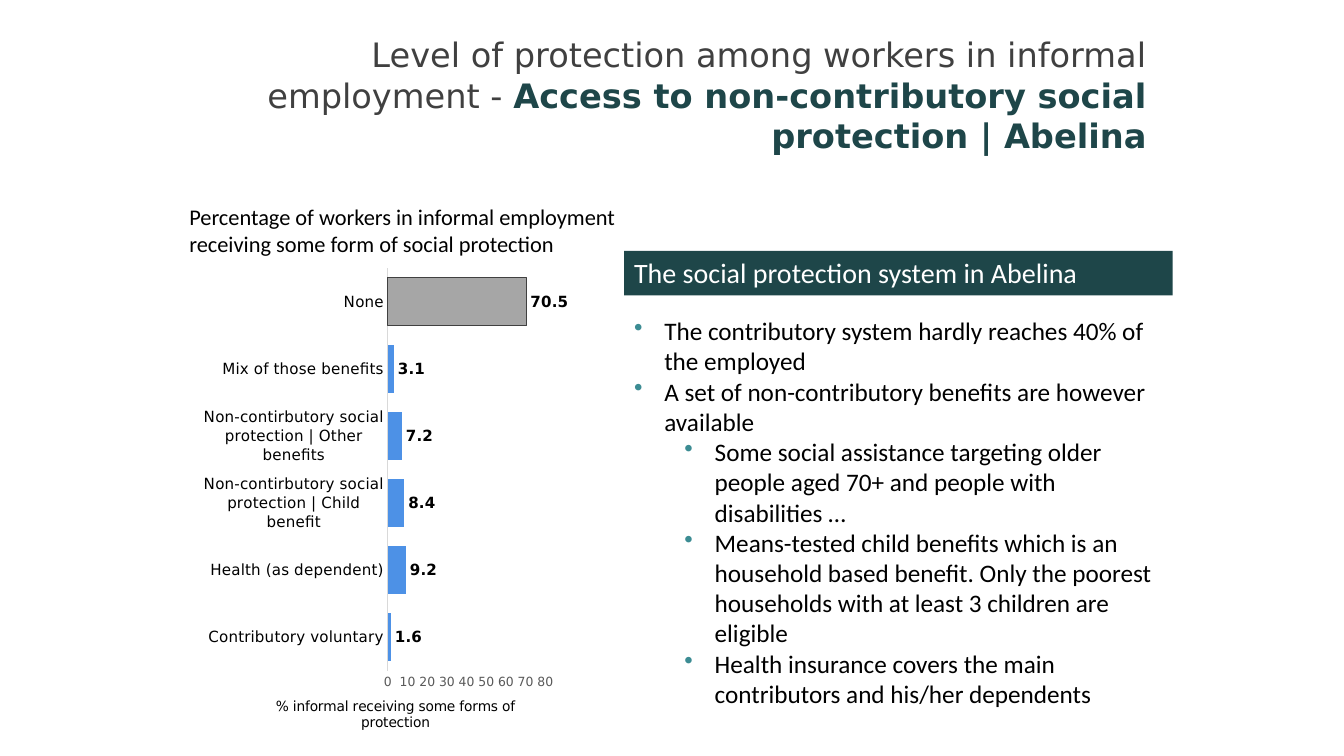
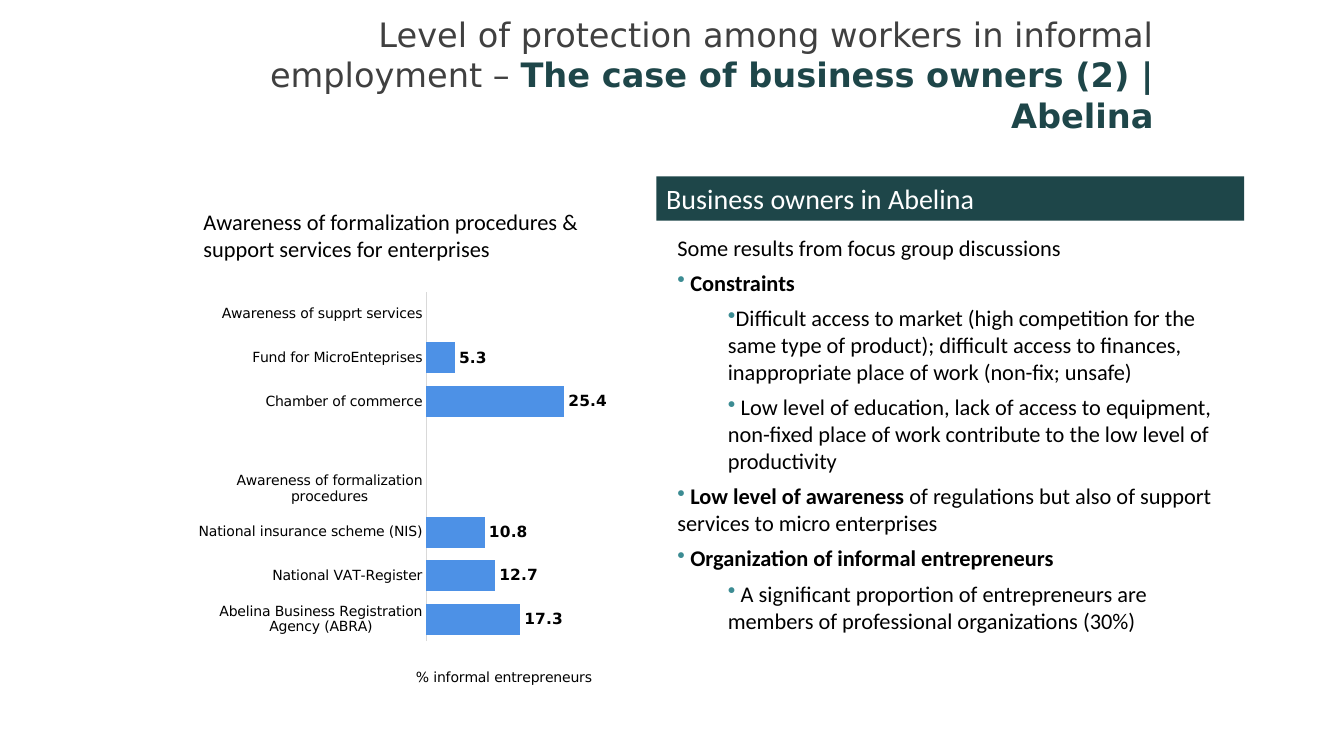
from dataclasses import dataclass

from lxml.etree import SubElement as Sub
from pptx import Presentation
from pptx.chart.data import CategoryChartData as ChartData
from pptx.dml.color import RGBColor as RGB
from pptx.enum.chart import XL_CHART_TYPE as Kind, XL_LABEL_POSITION as Spot
from pptx.enum.chart import XL_TICK_LABEL_POSITION as Ticks, XL_TICK_MARK as Mark
from pptx.enum.shapes import MSO_SHAPE as Shape
from pptx.enum.text import MSO_ANCHOR as Anchor, MSO_AUTO_SIZE as Fit, PP_ALIGN as Align
from pptx.oxml import parse_xml
from pptx.oxml.ns import nsdecls, qn
from pptx.util import Inches, Pt


@dataclass(frozen=True)
class Theme:
    body: str = "Calibri"
    head: str = "DejaVu Sans"
    dark: str = "1E4649"
    teal: str = "3C8C93"
    blue: str = "4D91E6"
    grey: str = "A6A6A6"
    rule: str = "D9D9D9"
    soft: str = "404040"
    pale: str = "595959"
    black: str = "000000"
    white: str = "FFFFFF"
    title: int = 24
    band: int = 20
    text: int = 18
    note: int = 16
    label: int = 11
    small: int = 10
    tick: int = 9


T = Theme()


def apply(obj, **vals):
    for name, val in vals.items():
        setattr(obj, name, val)


def style(font, size, color=T.black, name=T.body, bold=False):
    apply(font, size=Pt(size), name=name, bold=bold)
    font.color.rgb = RGB.from_string(color)


def paint(fmt, color):
    fmt.solid()
    fmt.fore_color.rgb = RGB.from_string(color)


def write(para, text, size, color=T.black, name=T.body, strong=None):
    """Write runs; the parts between asterisks are bold."""
    for i, part in enumerate(text.split("*")):
        if part:
            run = para.add_run()
            run.text = part
            bold = i % 2 == 1
            style(run.font, size, strong if bold and strong else color, name, bold)


def indent(para, left, first):
    props = para._p.get_or_add_pPr()
    props.set("marL", str(Inches(left)))
    props.set("indent", str(Inches(first)))
    return props


def bullet(para, left, first):
    props = indent(para, left, first)
    Sub(Sub(props, qn("a:buClr")), qn("a:srgbClr")).set("val", T.teal)
    Sub(props, qn("a:buChar")).set("char", "•")


def frame(slide, box, **vals):
    text = slide.shapes.add_textbox(*map(Inches, box)).text_frame
    apply(text, word_wrap=True, **vals)
    return text


def title(slide, box, text):
    para = frame(slide, box).paragraphs[0]
    para.alignment = Align.RIGHT
    indent(para, 0.45, -0.45)
    write(para, text, T.title, T.soft, T.head, T.dark)


def caption(slide, box, text):
    area = frame(slide, box, vertical_anchor=Anchor.MIDDLE, auto_size=Fit.SHAPE_TO_FIT_TEXT)
    write(area.paragraphs[0], text, T.note)


def band(slide, box, text):
    bar = slide.shapes.add_shape(Shape.RECTANGLE, *map(Inches, box))
    bar.shadow.inherit = False
    paint(bar.fill, T.dark)
    bar.line.fill.background()
    apply(bar.text_frame, word_wrap=True, vertical_anchor=Anchor.TOP)
    para = bar.text_frame.paragraphs[0]
    para.alignment = Align.LEFT
    write(para, text, T.band, T.white)


def points(slide, box, items, size, lefts, first=0, gap=0):
    """Write (level, text) items; level None has no bullet."""
    area = frame(slide, box, auto_size=Fit.SHAPE_TO_FIT_TEXT)
    for i, (level, text) in enumerate(items):
        para = area.add_paragraph() if i else area.paragraphs[0]
        if level is not None:
            apply(para, level=level, space_before=Pt(gap))
            bullet(para, lefts[level], first)
        write(para, text, size)


def layout(**vals):
    body = "".join(f'<c:{key} val="{val}"/>' for key, val in vals.items())
    return parse_xml(f'<c:layout {nsdecls("c")}><c:manualLayout>{body}'
                     "</c:manualLayout></c:layout>")


def place(parent, index, **vals):
    for old in parent.findall(qn("c:layout")):
        parent.remove(old)
    parent.insert(index, layout(**vals))


def bars(slide, box, rows, plot, top, name, spot, size, ticks=True):
    """Draw rows from bottom to top; plot and spot are shares of the box."""
    data = ChartData(number_format="0.0")
    data.categories = [row[0] for row in rows]
    data.add_series("Series 1", [row[1] for row in rows])
    chart = slide.shapes.add_chart(Kind.BAR_CLUSTERED, *map(Inches, box), data).chart
    apply(chart, has_title=False, has_legend=False)
    style(chart.font, T.small, name=T.head)
    x, y, w, h = plot
    place(chart._chartSpace.chart.plotArea, 0, layoutTarget="inner", xMode="edge",
          yMode="edge", x=x, y=y, w=w, h=h)

    cat, val = chart.category_axis, chart.value_axis
    for axis in (cat, val):
        apply(axis, major_tick_mark=Mark.NONE, minor_tick_mark=Mark.NONE,
              has_major_gridlines=False)
    style(cat.tick_labels.font, size, name=T.head)
    paint(cat.format.line.fill, T.rule)
    cat.format.line.width = Pt(0.75)
    apply(val, minimum_scale=0, maximum_scale=top, major_unit=10, has_title=True)
    val.format.line.fill.background()
    style(val.tick_labels.font, T.tick, T.pale, T.head)
    apply(val.tick_labels, number_format="0", number_format_is_linked=False)
    if not ticks:
        val.tick_label_position = Ticks.NONE
    head = val.axis_title
    write(head.text_frame.paragraphs[0], name, T.small, name=T.head)
    place(head._element, 1, xMode="edge", yMode="edge", x=spot[0], y=spot[1])

    group = chart.plots[0]
    apply(group, gap_width=40, vary_by_categories=False, has_data_labels=True)
    apply(group.data_labels, show_value=True, position=Spot.OUTSIDE_END,
          number_format="0.0", number_format_is_linked=False)
    style(group.data_labels.font, T.label, name=T.head, bold=True)
    line = group.series[0]
    paint(line.format.fill, T.blue)
    return line


def access(slide):
    title(slide, (2.02, 0.29, 9.45, 1.49),
          "Level of protection among workers in informal employment - "
          "*Access to non-contributory social protection | Abelina*")
    caption(slide, (1.78, 1.96, 5.04, 0.64),
            "Percentage of workers in informal employment receiving some form of "
            "social protection")
    band(slide, (6.19, 2.49, 5.44, 0.44), "The social protection system in Abelina")
    points(slide, (6.19, 3.08, 5.48, 4.04), [
        (0, "The contributory system hardly reaches 40% of the employed"),
        (0, "A set of non-contributory benefits are however available"),
        (1, "Some social assistance targeting older people aged 70+ and people with "
            "disabilities …"),
        (1, "Means-tested child benefits which is an household based benefit. Only the "
            "poorest households with at least 3 children are eligible"),
        (1, "Health insurance covers the main contributors and his/her dependents"),
    ], T.text, (0.3, 0.8), -0.3)
    line = bars(slide, (2.02, 2.52, 3.62, 4.77), [
        ("Contributory voluntary", 1.6),
        ("Health (as dependent)", 9.2),
        ("Non-contirbutory social protection | Child benefit", 8.4),
        ("Non-contirbutory social protection | Other benefits", 7.2),
        ("Mix of those benefits", 3.1),
        ("None", 70.5),
    ], (0.51, 0.03, 0.44, 0.84), 80, "% informal receiving some forms of protection",
        (0.19, 0.92), T.label)
    none = line.points[5].format
    paint(none.fill, T.grey)
    paint(none.line.fill, T.soft)
    none.line.width = Pt(0.75)


def owners(slide):
    title(slide, (1.78, 0.09, 9.76, 1.49),
          "Level of protection among workers in informal employment – "
          "*The case of business owners (2) | Abelina*")
    band(slide, (6.51, 1.75, 5.83, 0.44), "Business owners in Abelina")
    points(slide, (6.62, 2.27, 5.72, 4.11), [
        (None, "Some results from focus group discussions"),
        (0, " *Constraints*"),
        (1, "Difficult access to market (high competition for the same type of product); "
            "difficult access to finances, inappropriate place of work (non-fix; unsafe)"),
        (1, " Low level of education, lack of access to equipment, non-fixed place of work "
            "contribute to the low level of productivity"),
        (0, " *Low level of awareness *of regulations but also of support services to "
            "micro enterprises"),
        (0, " *Organization of informal entrepreneurs*"),
        (1, " A significant proportion of entrepreneurs are members of professional "
            "organizations (30%)"),
    ], T.note, (0, 0.5), gap=6)
    caption(slide, (1.92, 2.01, 4.53, 0.64),
            "Awareness of formalization procedures & support services for enterprises")
    bars(slide, (1.8, 2.82, 4.26, 4.07), [
        ("Abelina Business Registration Agency (ABRA)", 17.3),
        ("National VAT-Register", 12.7),
        ("National insurance scheme (NIS)", 10.8),
        ("Awareness of formalization procedures", None),
        ("", None),
        ("Chamber of commerce", 25.4),
        ("Fund for MicroEnteprises", 5.3),
        ("Awareness of supprt services", None),
    ], (0.57, 0.02, 0.38, 0.85), 30, "% informal entrepreneurs", (0.54, 0.93),
        T.small, ticks=False)


def main():
    deck = Presentation()
    apply(deck, slide_width=Inches(13.33), slide_height=Inches(7.5))
    for build in (access, owners):
        build(deck.slides.add_slide(deck.slide_layouts[6]))
    deck.save("out.pptx")


if __name__ == "__main__":
    main()
